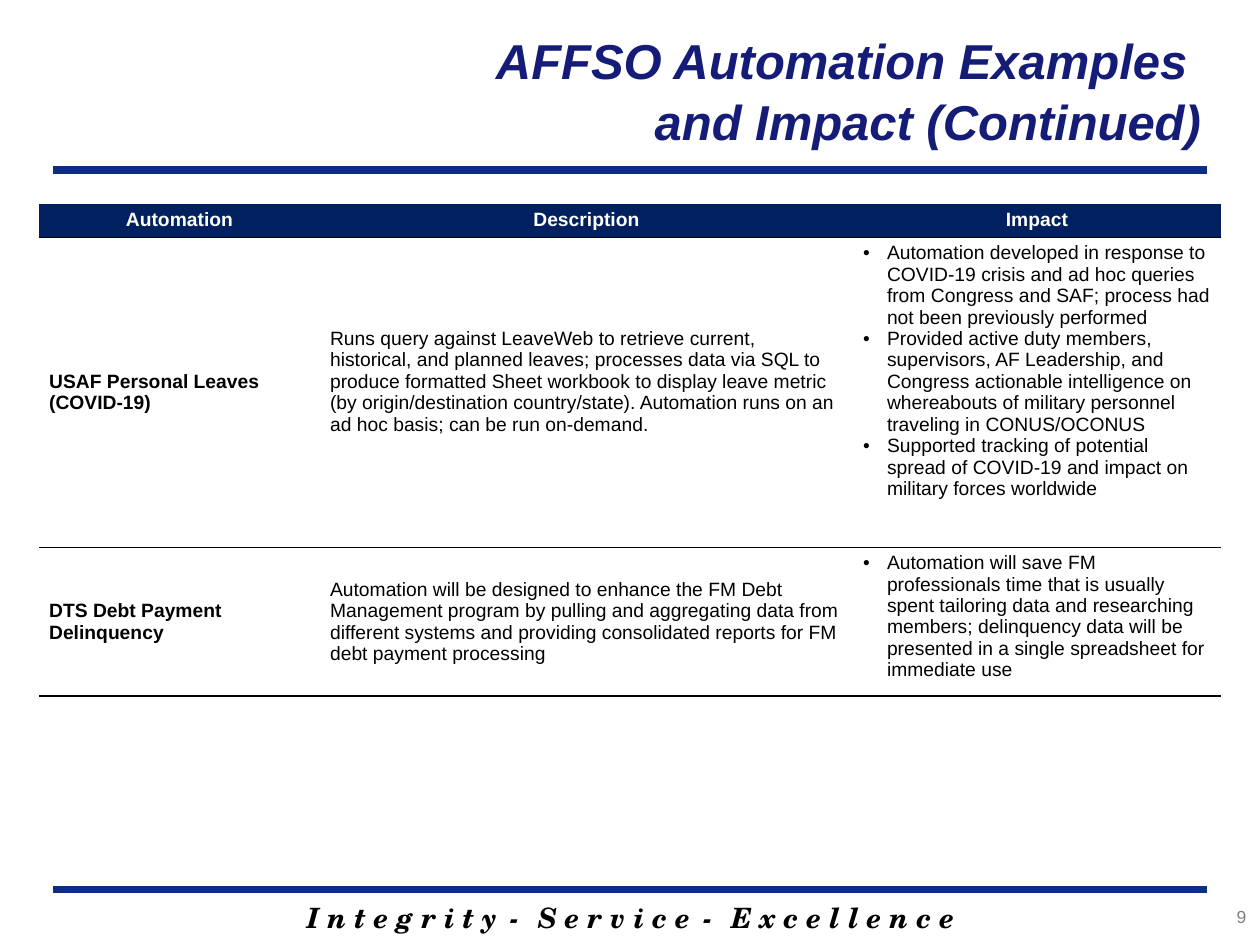
from lxml import etree
from pptx import Presentation
from pptx import util as u
from pptx.dml.color import RGBColor
from pptx.enum import shapes, text
from pptx.oxml import ns

COLORS = {
    "rule": "0C2D83",
    "title": "151C77",
    "header": "002060",
    "black": "000000",
    "white": "FFFFFF",
    "grey": "7F7F7F",
}
ALIGN = text.PP_ALIGN
ANCHOR = text.MSO_ANCHOR
NO_TABLE_STYLE = "{2D5ABB26-0587-4C30-8999-92F81FD0307C}"
COLUMN_WIDTHS = (2.23, 4.23, 2.92)
ROW_HEIGHTS = (0.25, 2.46, 1.1)
HEADINGS = ("Automation", "Description", "Impact")
AUTOMATIONS = (
    (
        "USAF Personal Leaves (COVID-19)",
        "Runs query against LeaveWeb to retrieve current, historical, and planned leaves; "
        "processes data via SQL to produce formatted Sheet workbook to display leave metric "
        "(by origin/destination country/state). Automation runs on an ad hoc basis; "
        "can be run on-demand.",
        (
            "Automation developed in response to COVID-19 crisis and ad hoc queries from "
            "Congress and SAF; process had not been previously performed",
            "Provided active duty members, supervisors, AF Leadership, and Congress actionable "
            "intelligence on whereabouts of military personnel traveling in CONUS/OCONUS",
            "Supported tracking of potential spread of COVID-19 and impact on military forces "
            "worldwide",
        ),
    ),
    (
        "DTS Debt Payment Delinquency",
        "Automation will be designed to enhance the FM Debt Management program by pulling and "
        "aggregating data from different systems and providing consolidated reports for FM "
        "debt payment processing",
        (
            "Automation will save FM professionals time that is usually spent tailoring data "
            "and researching members; delinquency data will be presented in a single "
            "spreadsheet for immediate use",
        ),
    ),
)


class SlideBuilder:
    font = "Arial"
    motto_font = "TeX Gyre Schola"
    table_size = 11

    def __init__(self, slide):
        self.slide = slide

    def color(self, name):
        return RGBColor.from_string(COLORS[name])

    def run(self, paragraph, content, size, color, bold=False, italic=False, font=None):
        run = paragraph.add_run()
        run.text = content
        run.font.name = font or self.font
        run.font.size = u.Pt(size)
        run.font.bold = bold
        run.font.italic = italic
        run.font.color.rgb = self.color(color)
        return run

    def text_box(self, left, top, width, height, align, anchor=ANCHOR.TOP):
        shape = self.slide.shapes.add_textbox(
            u.Inches(left), u.Inches(top), u.Inches(width), u.Inches(height)
        )
        shape.text_frame.word_wrap = True
        shape.text_frame.vertical_anchor = anchor
        paragraph = shape.text_frame.paragraphs[0]
        paragraph.alignment = align
        return paragraph

    def rule(self, top):
        line = self.slide.shapes.add_connector(
            shapes.MSO_CONNECTOR.STRAIGHT,
            u.Inches(0.42), u.Inches(top), u.Inches(9.58), u.Inches(top),
        )
        line.line.color.rgb = self.color("rule")
        line.line.width = u.Pt(4.5)
        etree.SubElement(line._element.spPr, ns.qn("a:effectLst"))

    def title(self, lines):
        paragraph = self.text_box(1.82, 0.08, 7.81, 1.25, ALIGN.RIGHT, ANCHOR.MIDDLE)
        paragraph.line_spacing = 1.05
        for index, line in enumerate(lines):
            if index:
                paragraph.add_line_break()
            self.run(paragraph, line, 28, "title", bold=True, italic=True)

    def motto(self, words):
        paragraph = self.text_box(1.42, 7.1, 7.17, 0.37, ALIGN.CENTER)
        style = dict(size=16, color="black", bold=True, italic=True, font=self.motto_font)
        for index, word in enumerate(words):
            if index:
                dash = self.run(paragraph, " - ", **style)
                dash.font._element.set("spc", "300")
            self.run(paragraph, " ".join(word), **style)

    def page_number(self, number):
        paragraph = self.text_box(8.74, 7.14, 1.25, 0.33, ALIGN.RIGHT)
        self.run(paragraph, number, 10, "grey")

    def bullet(self, paragraph):
        properties = paragraph._p.get_or_add_pPr()
        properties.set("marL", str(u.Inches(0.19)))
        properties.set("indent", str(u.Inches(-0.19)))
        etree.SubElement(properties, ns.qn("a:buFont"), typeface=self.font)
        etree.SubElement(properties, ns.qn("a:buChar"), char="•")

    def bottom_border(self, cell):
        border = etree.Element(ns.qn("a:lnB"), w=str(u.Pt(1)))
        fill = etree.SubElement(border, ns.qn("a:solidFill"))
        etree.SubElement(fill, ns.qn("a:srgbClr"), val=COLORS["black"])
        cell._tc.get_or_add_tcPr().insert(0, border)

    def cell(self, cell, items, color="black", fill=None, bold=False,
             bullets=False, align=ALIGN.LEFT, anchor=ANCHOR.MIDDLE, bottom=0.04):
        cell.margin_left = cell.margin_right = u.Inches(0.08)
        cell.margin_top = u.Inches(0.04)
        cell.margin_bottom = u.Inches(bottom)
        cell.vertical_anchor = anchor
        if fill:
            cell.fill.solid()
            cell.fill.fore_color.rgb = self.color(fill)
        else:
            cell.fill.background()
        self.bottom_border(cell)
        for index, item in enumerate(items):
            frame = cell.text_frame
            paragraph = frame.add_paragraph() if index else frame.paragraphs[0]
            paragraph.alignment = align
            if bullets:
                self.bullet(paragraph)
            self.run(paragraph, item, self.table_size, color, bold)

    def table(self, left, top):
        frame = self.slide.shapes.add_table(
            len(ROW_HEIGHTS), len(COLUMN_WIDTHS), u.Inches(left), u.Inches(top),
            u.Inches(sum(COLUMN_WIDTHS)), u.Inches(sum(ROW_HEIGHTS)),
        )
        table = frame.table
        table.horz_banding = False
        table._tbl.tblPr.find(ns.qn("a:tableStyleId")).text = NO_TABLE_STYLE
        for column, width in zip(table.columns, COLUMN_WIDTHS):
            column.width = u.Inches(width)
        for row, height in zip(table.rows, ROW_HEIGHTS):
            row.height = u.Inches(height)
        for column, heading in enumerate(HEADINGS):
            self.cell(table.cell(0, column), [heading], "white", "header", bold=True,
                      align=ALIGN.CENTER, anchor=ANCHOR.TOP)
        for row, (name, description, impacts) in enumerate(AUTOMATIONS, 1):
            self.cell(table.cell(row, 0), [name], bold=True)
            self.cell(table.cell(row, 1), [description], bottom=0.21 if row == 1 else 0.04)
            self.cell(table.cell(row, 2), impacts, bullets=True, anchor=ANCHOR.TOP)


def main():
    presentation = Presentation()
    presentation.slide_width = u.Inches(10)
    presentation.slide_height = u.Inches(7.5)
    builder = SlideBuilder(presentation.slides.add_slide(presentation.slide_layouts[6]))
    builder.motto(("Integrity", "Service", "Excellence"))
    for top in (7.06, 1.35):
        builder.rule(top)
    builder.title(("AFFSO Automation Examples ", "and Impact (Continued)"))
    builder.page_number("9")
    builder.table(0.31, 1.62)
    presentation.save("out.pptx")


if __name__ == "__main__":
    main()
